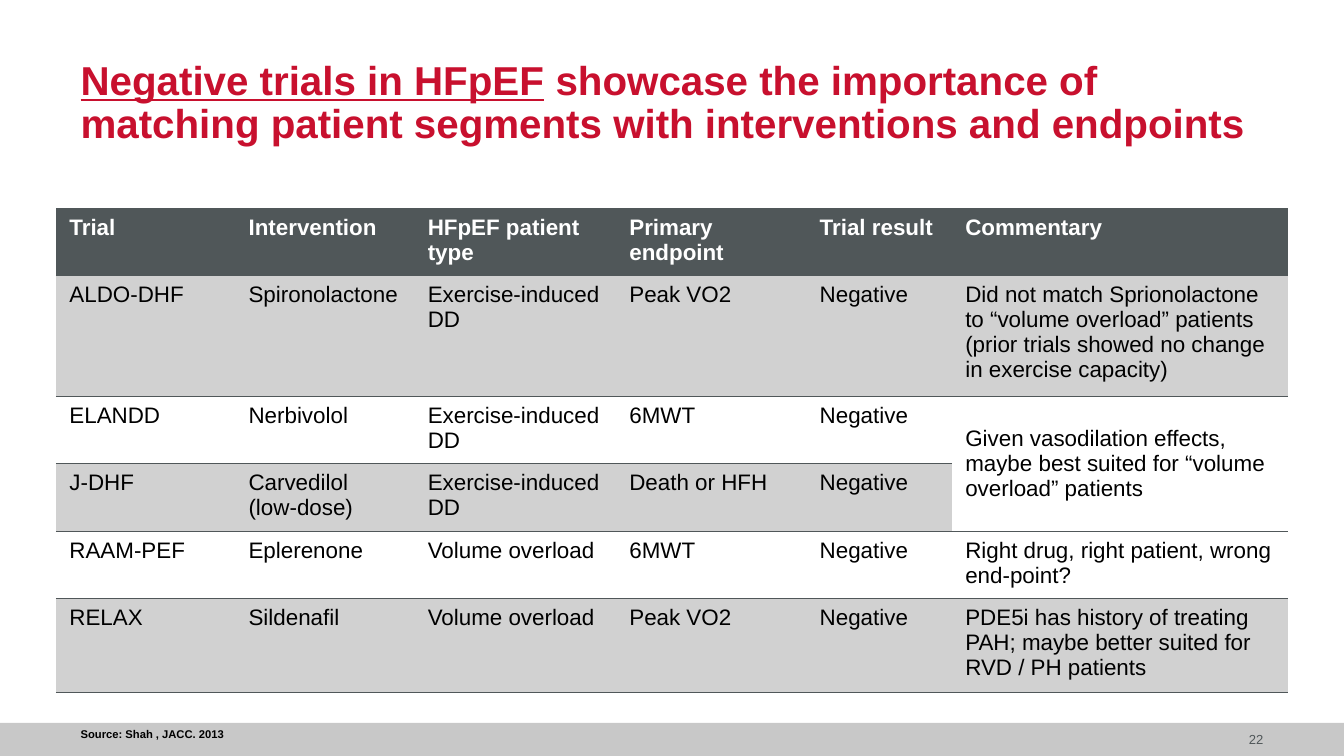
from dataclasses import dataclass

from lxml.etree import SubElement
from pptx import Presentation
from pptx.dml.color import RGBColor
from pptx.enum.shapes import MSO_SHAPE
from pptx.enum.text import MSO_ANCHOR, PP_ALIGN
from pptx.oxml.ns import qn
from pptx.util import Inches, Pt

FONT = "Arial"
RED = RGBColor(0xC8, 0x10, 0x2E)
SLATE = RGBColor(0x50, 0x57, 0x59)
BAND_GREY = RGBColor(0xD1, 0xD1, 0xD1)
FOOTER_GREY = RGBColor(0xC8, 0xC8, 0xC8)
BLACK = RGBColor(0, 0, 0)
WHITE = RGBColor(0xFF, 0xFF, 0xFF)
PLAIN_TABLE_STYLE = "{2D5ABB26-0587-4C30-8999-92F81FD0307C}"


@dataclass(frozen=True)
class TextStyle:
    size: float
    color: RGBColor
    bold: bool = False


@dataclass(frozen=True)
class Trial:
    name: str
    intervention: str
    patient_type: str
    endpoint: str
    commentary: str
    height: float = 0.48
    result: str = "Negative"

    def texts(self) -> list[str]:
        return [self.name, self.intervention, self.patient_type,
                self.endpoint, self.result, self.commentary]


TITLE_STYLE = TextStyle(21.6, RED, True)
HEADER_STYLE = TextStyle(12, WHITE, True)
BODY_STYLE = TextStyle(12, BLACK)
NUMBER_STYLE = TextStyle(7, SLATE)
SOURCE_STYLE = TextStyle(6, BLACK, True)

HEADINGS = ["Trial", "Intervention", "HFpEF patient type",
            "Primary endpoint", "Trial result", "Commentary"]
COLUMN_TWELFTHS = [16, 16, 18, 17, 13, 30]  # widths in twelfths of an inch
HEADER_HEIGHT = 0.48
TABLE_HEIGHT = 3.6
TRIALS = [
    Trial("ALDO-DHF", "Spironolactone", "Exercise-induced DD", "Peak VO2",
          "Did not match Sprionolactone to “volume overload” patients "
          "(prior trials showed no change in exercise capacity)", 0.77),
    Trial("ELANDD", "Nerbivolol", "Exercise-induced DD", "6MWT",
          "Given vasodilation effects, maybe best suited for "
          "“volume overload” patients"),
    Trial("J-DHF", "Carvedilol (low-dose)", "Exercise-induced DD",
          "Death or HFH", ""),
    Trial("RAAM-PEF", "Eplerenone", "Volume overload", "6MWT",
          "Right drug, right patient, wrong end-point?"),
    Trial("RELAX", "Sildenafil", "Volume overload", "Peak VO2",
          "PDE5i has history of treating PAH; maybe better suited for "
          "RVD / PH patients", 0.6),
]


def add_run(paragraph, text: str, style: TextStyle, underline: bool = False) -> None:
    run = paragraph.add_run()
    run.text = text
    font = run.font
    font.name, font.size, font.bold = FONT, Pt(style.size), style.bold
    font.underline = underline
    font.color.rgb = style.color


def add_text_area(slide, left: float, top: float, width: float, height: float,
                  anchor: MSO_ANCHOR):
    """Add a text box without insets and return its first paragraph."""
    frame = slide.shapes.add_textbox(Inches(left), Inches(top),
                                     Inches(width), Inches(height)).text_frame
    frame.word_wrap = True
    frame.vertical_anchor = anchor
    frame.margin_left = frame.margin_right = 0
    frame.margin_top = frame.margin_bottom = 0
    return frame.paragraphs[0]


def rule_cell(cell) -> None:
    """Draw thin lines above and below a cell."""
    properties = cell._tc.get_or_add_tcPr()
    for index, side in enumerate(("a:lnT", "a:lnB")):
        line = SubElement(properties, qn(side), w=str(Pt(0.5)))
        fill = SubElement(line, qn("a:solidFill"))
        SubElement(fill, qn("a:srgbClr"), val=str(SLATE))
        properties.insert(index, line)


def fill_cell(cell, text: str, style: TextStyle, color: RGBColor | None) -> None:
    if color is None:
        cell.fill.background()
    else:
        cell.fill.solid()
        cell.fill.fore_color.rgb = color
    if text:
        add_run(cell.text_frame.paragraphs[0], text, style)


def add_trial_table(slide) -> None:
    heights = [HEADER_HEIGHT] + [trial.height for trial in TRIALS]
    table_frame = slide.shapes.add_table(
        len(heights), len(HEADINGS), Inches(5 / 12), Inches(1.55),
        Inches(sum(COLUMN_TWELFTHS) / 12), Inches(TABLE_HEIGHT))
    table = table_frame.table
    table._tbl.tblPr.find(qn("a:tableStyleId")).text = PLAIN_TABLE_STYLE
    for column, twelfths in zip(table.columns, COLUMN_TWELFTHS):
        column.width = Inches(twelfths / 12)
    for row, height in zip(table.rows, heights):
        row.height = Inches(height)
    # Row heights reset the frame, which keeps room for growing rows
    table_frame.height = Inches(TABLE_HEIGHT)

    for cell, heading in zip(table.rows[0].cells, HEADINGS):
        fill_cell(cell, heading, HEADER_STYLE, SLATE)

    for number, trial in enumerate(TRIALS, start=1):
        band = BAND_GREY if number % 2 else None
        for cell, text in zip(table.rows[number].cells, trial.texts()):
            fill_cell(cell, text, BODY_STYLE, band)
            rule_cell(cell)

    # ELANDD and J-DHF share one comment
    shared_comment = table.cell(2, 5)
    shared_comment.merge(table.cell(3, 5))
    shared_comment.vertical_anchor = MSO_ANCHOR.MIDDLE
    table.cell(3, 5).fill.background()


def main() -> None:
    presentation = Presentation()
    presentation.slide_width = Inches(10)
    presentation.slide_height = Inches(10 * 9 / 16)
    slide = presentation.slides.add_slide(presentation.slide_layouts[6])

    # Footer band
    footer_top = Inches(5.38)
    footer = slide.shapes.add_shape(
        MSO_SHAPE.RECTANGLE, 0, footer_top, presentation.slide_width,
        presentation.slide_height - footer_top)
    footer.shadow.inherit = False
    footer.fill.solid()
    footer.fill.fore_color.rgb = FOOTER_GREY
    footer.line.fill.background()

    # Title
    title = add_text_area(slide, 0.6, 0.4, 8.9, 0.75, MSO_ANCHOR.MIDDLE)
    title.line_spacing = 0.9
    add_run(title, "Negative trials in HFpEF", TITLE_STYLE, underline=True)
    add_run(title, " showcase the importance of matching patient segments "
            "with interventions and endpoints", TITLE_STYLE)

    # Trials
    add_trial_table(slide)

    # Page number and source
    page_number = add_text_area(slide, 9, 5.38, 0.4, 0.24, MSO_ANCHOR.MIDDLE)
    page_number.alignment = PP_ALIGN.RIGHT
    add_run(page_number, "22", NUMBER_STYLE)
    source = add_text_area(slide, 0.6, 5.41, 7.65, 0.1, MSO_ANCHOR.TOP)
    add_run(source, "Source: Shah , JACC. 2013", SOURCE_STYLE)

    presentation.save("out.pptx")


if __name__ == "__main__":
    main()
